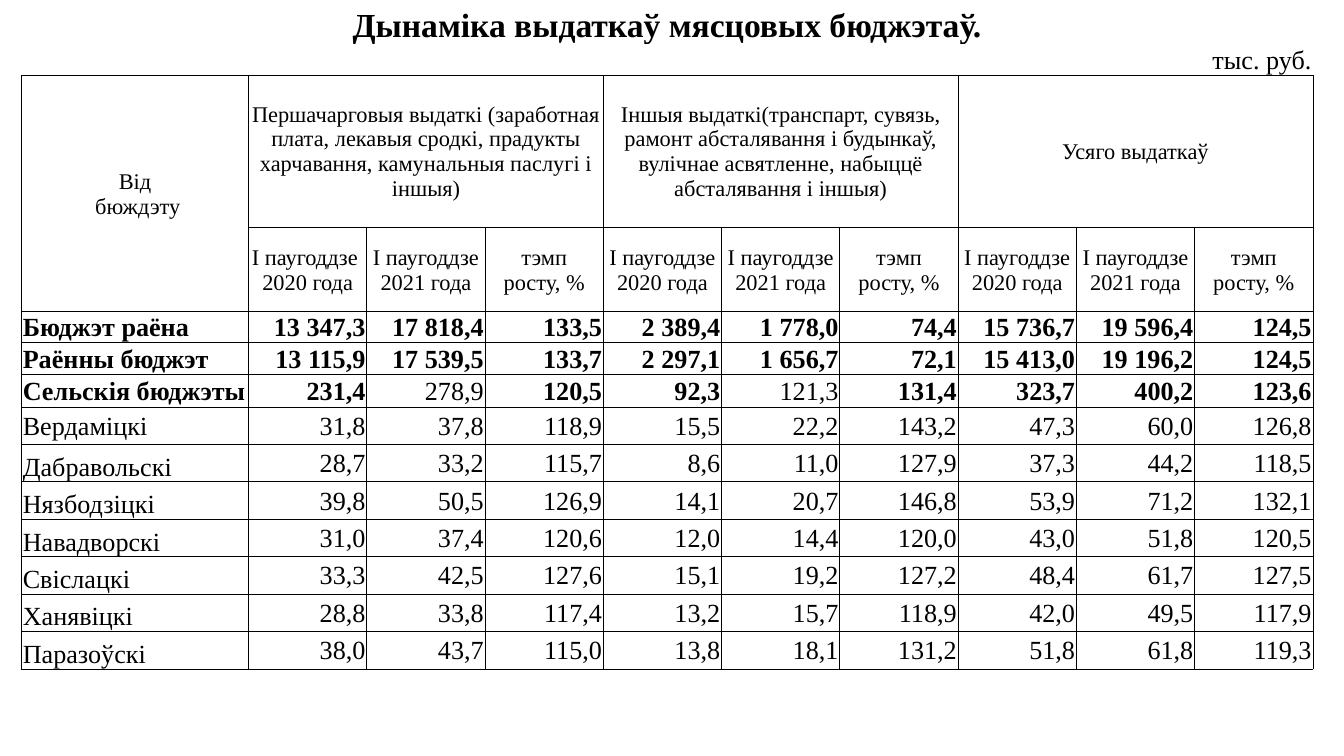
"""Build a slide with a table of local budget spending."""
import lxml.etree
import pptx
import pptx.dml.color
import pptx.enum.text
import pptx.oxml.ns
import pptx.util

Inches = pptx.util.Inches
Pt = pptx.util.Pt
ALIGN = pptx.enum.text.PP_ALIGN
ANCHOR = pptx.enum.text.MSO_ANCHOR
qn = pptx.oxml.ns.qn
BLACK = pptx.dml.color.RGBColor(0x00, 0x00, 0x00)
FONT = "Times New Roman"

TITLE = "Дынаміка выдаткаў мясцовых бюджэтаў."
GROUPS = [
    "Першачарговыя выдаткі (заработная плата, лекавыя сродкі, прадукты харчавання, "
    "камунальныя паслугі і іншыя)",
    "Іншыя выдаткі(транспарт, сувязь, рамонт абсталявання і будынкаў, "
    "вулічнае асвятленне, набыццё абсталявання і іншыя)",
    "Усяго выдаткаў",
]
GROWTH = "тэмп\nросту, %"
PERIODS = ["I паугоддзе 2020 года", "I паугоддзе 2021 года", GROWTH]
SUBHEADS = ["I паугоддзе \n2020 года", "I паугоддзе\n2021 года", GROWTH] + PERIODS * 2
BUDGETS = [
    "Бюджэт раёна|13 347,3|17 818,4|133,5|2 389,4|1 778,0|74,4|15 736,7|19 596,4|124,5",
    "Раённы бюджэт|13 115,9|17 539,5|133,7|2 297,1|1 656,7|72,1|15 413,0|19 196,2|124,5",
    "Сельскія бюджэты|231,4|278,9|120,5|92,3|121,3|131,4|323,7|400,2|123,6",
    "Вердаміцкі|31,8|37,8|118,9|15,5|22,2|143,2|47,3|60,0|126,8",
    "Дабравольскі|28,7|33,2|115,7|8,6|11,0|127,9|37,3|44,2|118,5",
    "Нязбодзіцкі|39,8|50,5|126,9|14,1|20,7|146,8|53,9|71,2|132,1",
    "Навадворскі|31,0|37,4|120,6|12,0|14,4|120,0|43,0|51,8|120,5",
    "Свіслацкі|33,3|42,5|127,6|15,1|19,2|127,2|48,4|61,7|127,5",
    "Ханявіцкі|28,8|33,8|117,4|13,2|15,7|118,9|42,0|49,5|117,9",
    "Паразоўскі|38,0|43,7|115,0|13,8|18,1|131,2|51,8|61,8|119,3",
]
TOTALS = 3
FIRST_BUDGET = 4
PLAIN_TOTALS = [(2, 2), (2, 5)]
COL_WIDTHS = [1.69] + [0.88] * 9
ROW_HEIGHTS = [0.3, 0.23, 1.13, 0.63, 0.23, 0.24, 0.24] + [1.95 / 7] * 7


def write(cell, text, size, align=ALIGN.CENTER, anchor=ANCHOR.MIDDLE, bold=False):
    cell.vertical_anchor = anchor
    tf = cell.text_frame
    for i, line in enumerate(text.split("\n")):
        p = tf.paragraphs[0] if i == 0 else tf.add_paragraph()
        p.alignment = align
        r = p.add_run()
        r.text = line
        r.font.name = FONT
        r.font.size = Pt(size)
        r.font.bold = bold
        r.font.color.rgb = BLACK


def draw_borders(cell, sides):
    tc_pr = cell._tc.get_or_add_tcPr()
    for i, side in enumerate(sides):
        ln = lxml.etree.Element(qn("a:ln" + side), w=str(Pt(0.5)))
        fill = lxml.etree.SubElement(ln, qn("a:solidFill"))
        lxml.etree.SubElement(fill, qn("a:srgbClr"), val=str(BLACK))
        tc_pr.insert(i, ln)


prs = pptx.Presentation()
prs.slide_width = Inches(10)
prs.slide_height = Inches(10 * 9 / 16)
s = prs.slides.add_slide(prs.slide_layouts[6])

frame = s.shapes.add_table(
    len(ROW_HEIGHTS), len(COL_WIDTHS), Inches(0.16), Inches(0.03),
    Inches(sum(COL_WIDTHS)), Inches(sum(ROW_HEIGHTS)))
table = frame.table
table.first_row = False
table.horz_banding = False
for col, width in zip(table.columns, COL_WIDTHS):
    col.width = Inches(width)
for row, height in zip(table.rows, ROW_HEIGHTS):
    row.height = Inches(height)

for row_no, row in enumerate(table.rows):
    for cell in row.cells:
        cell.margin_left = cell.margin_right = cell.margin_top = Inches(0.01)
        cell.margin_bottom = 0
        cell.fill.background()
        if row_no == 1:
            draw_borders(cell, "B")
        elif row_no > 1:
            draw_borders(cell, "LRTB")

table.cell(0, 0).merge(table.cell(0, 9))
write(table.cell(0, 0), TITLE, 18, anchor=ANCHOR.BOTTOM, bold=True)

for col_no in (1, 3, 5):
    table.cell(1, col_no).merge(table.cell(1, col_no + 1))
write(table.cell(1, 9), "тыс. руб.", 14, ALIGN.RIGHT, ANCHOR.BOTTOM)

table.cell(2, 0).merge(table.cell(3, 0))
write(table.cell(2, 0), "Від\n бюждэту", 12)
for i, group in enumerate(GROUPS):
    first = 1 + 3 * i
    table.cell(2, first).merge(table.cell(2, first + 2))
    write(table.cell(2, first), group, 12)
for col_no, subhead in enumerate(SUBHEADS, 1):
    write(table.cell(3, col_no), subhead, 12)

for i, budget in enumerate(BUDGETS):
    for col_no, value in enumerate(budget.split("|")):
        is_name = col_no == 0
        write(
            table.cell(FIRST_BUDGET + i, col_no), value, 14,
            ALIGN.LEFT if is_name else ALIGN.RIGHT,
            ANCHOR.BOTTOM if is_name and i > TOTALS else ANCHOR.MIDDLE,
            i < TOTALS and (i, col_no) not in PLAIN_TOTALS)

for cell in table.iter_cells():
    if not cell.text_frame.text:
        p = cell.text_frame.paragraphs[0]
        lxml.etree.SubElement(p._p, qn("a:endParaRPr"), sz="1200")

prs.save("out.pptx")
